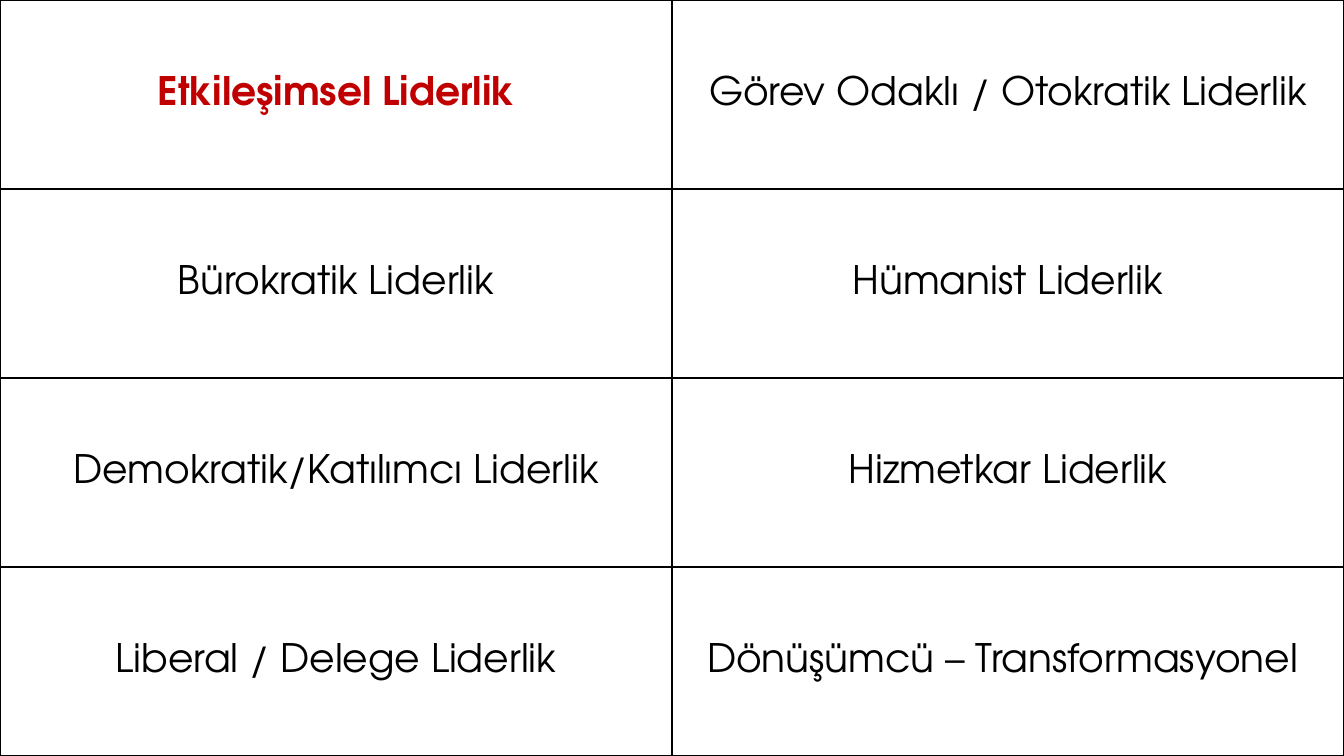
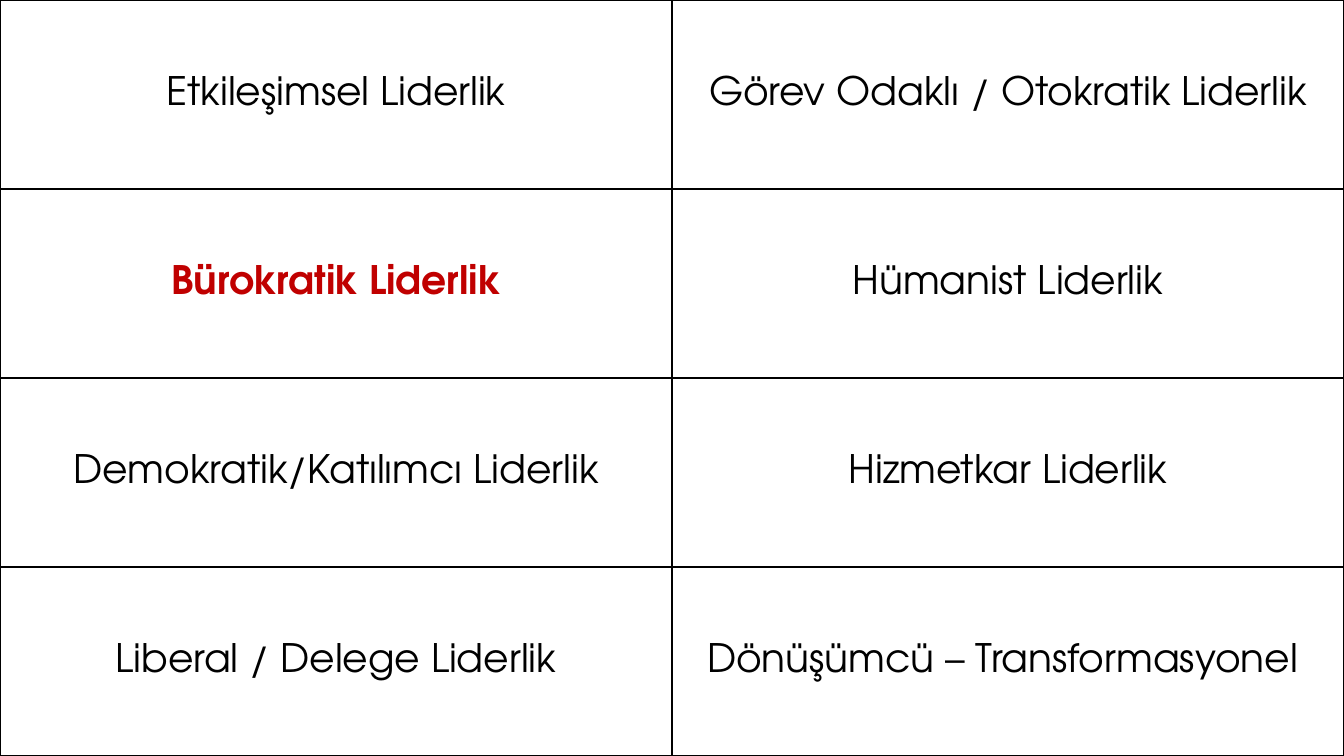
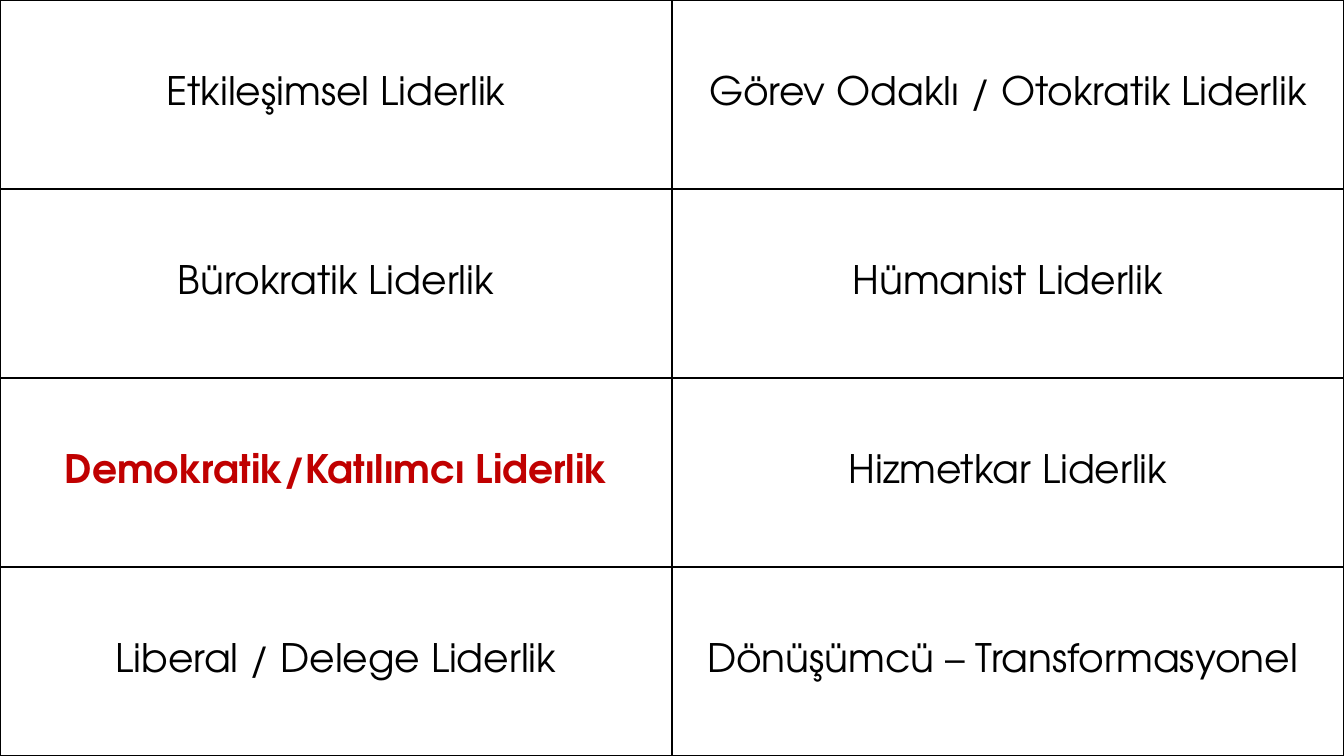
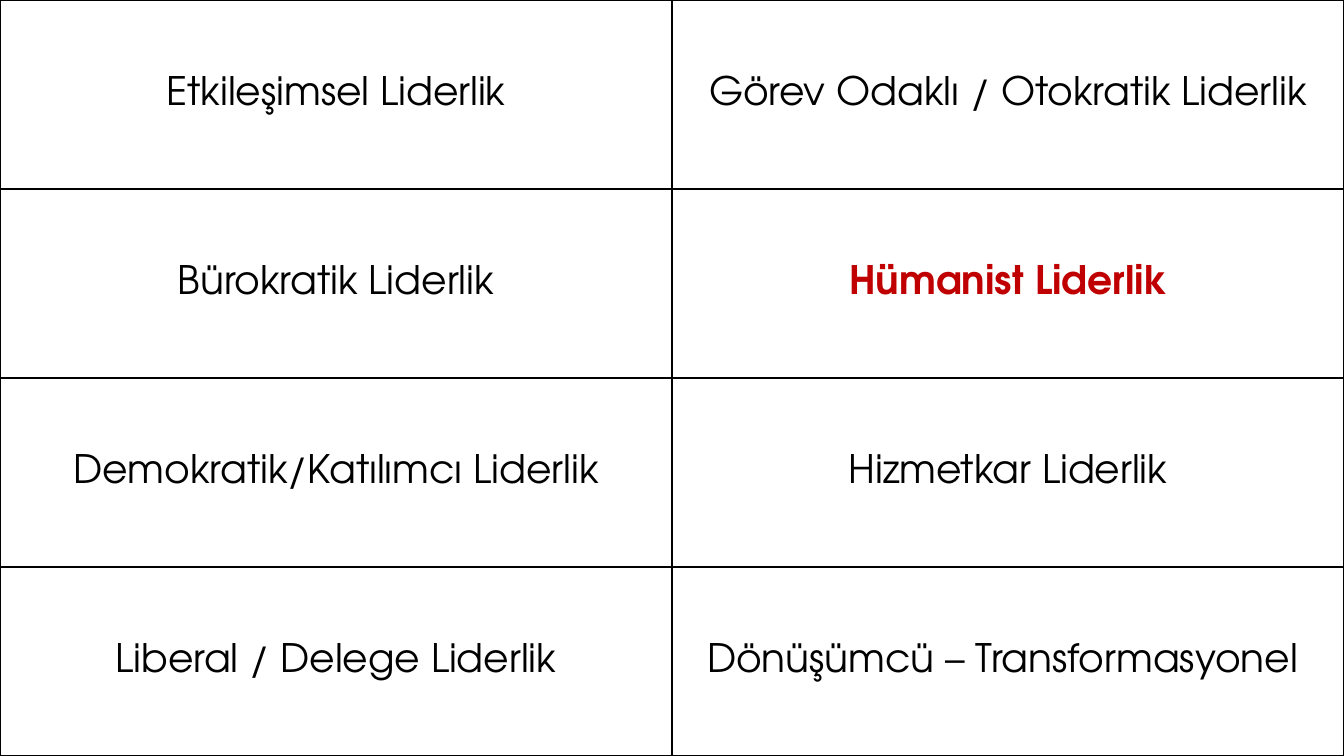
from lxml import etree
from pptx import Presentation
from pptx import util as u
from pptx.dml.color import RGBColor
from pptx.enum import text
from pptx.oxml.ns import qn

FONT, SIZE = "TeX Gyre Adventor", 28
BLACK, RED, WHITE = "000000", "C00000", "FFFFFF"
BORDER = 1  # points

STYLES = [
    ("Etkileşimsel Liderlik", "Görev Odaklı / Otokratik Liderlik"),
    ("Bürokratik Liderlik", "Hümanist Liderlik"),
    ("Demokratik/Katılımcı Liderlik", "Hizmetkar Liderlik"),
    ("Liberal / Delege Liderlik", "Dönüşümcü – Transformasyonel "),
]
# Row and column of the highlighted cell, one per slide
HIGHLIGHTS = [(0, 0), (1, 0), (2, 0), (1, 1)]


def write(cell, words, color=BLACK, bold=False):
    cell.vertical_anchor = text.MSO_ANCHOR.MIDDLE
    p = cell.text_frame.paragraphs[0]
    p.alignment = text.PP_ALIGN.CENTER
    r = p.add_run()
    r.text = words
    r.font.name, r.font.size, r.font.bold = FONT, u.Pt(SIZE), bold
    r.font.color.rgb = RGBColor.from_string(color)


def add_borders(cell, color=BLACK, width=BORDER):
    tc_pr = cell._tc.get_or_add_tcPr()
    # Border lines come before the fill, in this order
    for i, side in enumerate(("lnL", "lnR", "lnT", "lnB")):
        ln = etree.Element(qn("a:" + side), w=str(u.Pt(width)))
        fill = etree.SubElement(ln, qn("a:solidFill"))
        etree.SubElement(fill, qn("a:srgbClr"), val=color)
        tc_pr.insert(i, ln)


prs = Presentation()
prs.slide_width, prs.slide_height = u.Inches(13.33), u.Inches(7.5)

# White background shared through the master
bg = prs.slide_master.background.fill
bg.solid()
bg.fore_color.rgb = RGBColor.from_string(WHITE)

n_rows, n_cols = len(STYLES), len(STYLES[0])

for highlight in HIGHLIGHTS:
    s = prs.slides.add_slide(prs.slide_layouts[6])

    # Table of equal cells filling the slide
    table = s.shapes.add_table(
        n_rows, n_cols, 0, 0, prs.slide_width, prs.slide_height).table
    table.first_row = table.horz_banding = False

    for row, names in enumerate(STYLES):
        for col, name in enumerate(names):
            cell = table.cell(row, col)
            chosen = (row, col) == highlight
            write(cell, name, color=RED if chosen else BLACK, bold=chosen)
            cell.fill.background()
            add_borders(cell)

prs.save("out.pptx")
